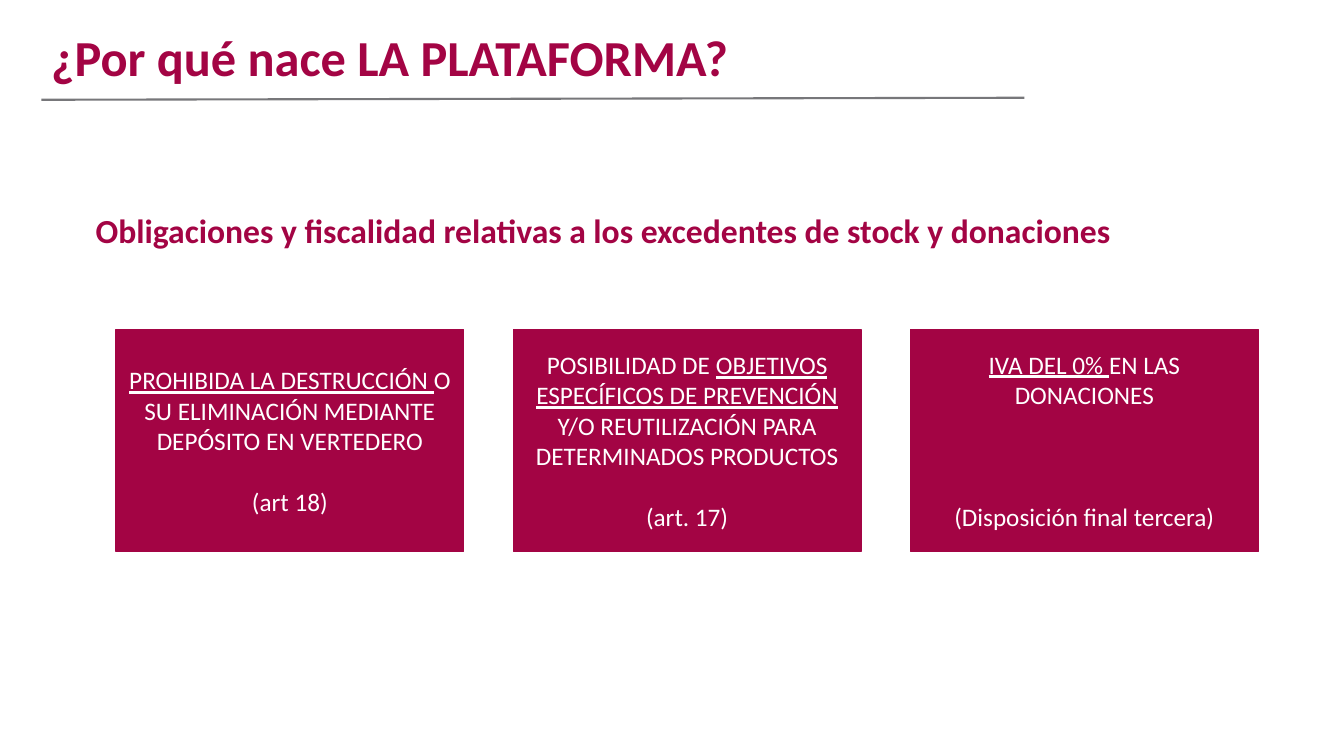
from pptx import Presentation
from pptx.dml.color import RGBColor
from pptx.enum.shapes import MSO_CONNECTOR, MSO_SHAPE
from pptx.enum.text import MSO_ANCHOR, MSO_AUTO_SIZE, PP_ALIGN
from pptx.oxml.ns import qn
from pptx.util import Inches, Pt
from lxml import etree

STRAIGHT = MSO_CONNECTOR.STRAIGHT
RECTANGLE = MSO_SHAPE.RECTANGLE
MIDDLE = MSO_ANCHOR.MIDDLE
GROW = MSO_AUTO_SIZE.SHAPE_TO_FIT_TEXT
CENTER = PP_ALIGN.CENTER

FONT = "Calibri"
CRIMSON, GREY, WHITE = "A30444", "77777A", "FFFFFF"

# text, (left, top, width, height), size, line spacing
HEADINGS = [
    ("¿Por qué nace LA PLATAFORMA?", (0.41, 0.33, 9.17, 0.6), 36, 0.8),
    ("Obligaciones y fiscalidad relativas a los excedentes de stock y donaciones",
     (0.85, 2.03, 11.25, 0.5), 24, 1.0),
]
RULE = (0.41, 0.99, 10.16, 0.97)

# measure as (text, underlined) spans, legal reference, lines of gap between them
CARDS = [
    ([("PROHIBIDA LA DESTRUCCIÓN ", True),
      ("O SU ELIMINACIÓN MEDIANTE DEPÓSITO EN VERTEDERO", False)],
     "(art 18)", 1),
    ([("POSIBILIDAD DE ", False),
      ("OBJETIVOS ESPECÍFICOS DE PREVENCIÓN ", True),
      ("Y/O REUTILIZACIÓN PARA DETERMINADOS PRODUCTOS", False)],
     "(art. 17)", 1),
    ([("IVA DEL 0% ", True), ("EN LAS DONACIONES", False)],
     "(Disposición final tercera)", 3),
]
CARD_LEFT, CARD_TOP, CARD_WIDTH, CARD_HEIGHT = 1.15, 3.27, 3.45, 2.2
CARD_STEP = 3.94
CARD_SIZE, CARD_LINE = 18, 22


def color(hex_code):
    return RGBColor.from_string(hex_code)


def add_span(para, text, size, hex_code, **formats):
    span = para.add_run()
    span.text = text
    span.font.color.rgb = color(hex_code)
    for name, value in {"name": FONT, "size": Pt(size), **formats}.items():
        setattr(span.font, name, value)


def add_heading(page, text, place, size, spacing):
    frame = page.shapes.add_textbox(*map(Inches, place)).text_frame
    frame.word_wrap = True
    frame.auto_size = GROW
    para = frame.paragraphs[0]
    para.line_spacing = spacing
    add_span(para, text, size, CRIMSON, bold=True)


def add_rule(page):
    rule = page.shapes.add_connector(STRAIGHT, *map(Inches, RULE))
    rule.line.color.rgb = color(GREY)
    rule.line.width = Pt(1.5)
    etree.SubElement(rule._element.spPr, qn("a:effectLst"))


def add_card(page, left, measure, reference, gap_lines):
    place = (left, CARD_TOP, CARD_WIDTH, CARD_HEIGHT)
    box = page.shapes.add_shape(RECTANGLE, *map(Inches, place))
    box.shadow.inherit = False
    box.fill.solid()
    box.fill.fore_color.rgb = color(CRIMSON)
    box.line.color.rgb = color(CRIMSON)
    box.line.width = Pt(1)
    frame = box.text_frame
    frame.word_wrap = True
    frame.vertical_anchor = MIDDLE
    paras = [frame.paragraphs[0], frame.add_paragraph()]
    for para, spans in zip(paras, (measure, [(reference, False)])):
        para.alignment = CENTER
        for text, underlined in spans:
            add_span(para, text, CARD_SIZE, WHITE, underline=underlined)
    paras[1].space_before = Pt(gap_lines * CARD_LINE)


def main():
    deck = Presentation()
    deck.slide_width, deck.slide_height = Inches(13.33), Inches(7.5)
    page = deck.slides.add_slide(deck.slide_layouts[6])
    add_rule(page)
    for heading in HEADINGS:
        add_heading(page, *heading)
    for index, card in enumerate(CARDS):
        add_card(page, CARD_LEFT + index * CARD_STEP, *card)
    deck.save("out.pptx")


if __name__ == "__main__":
    main()
